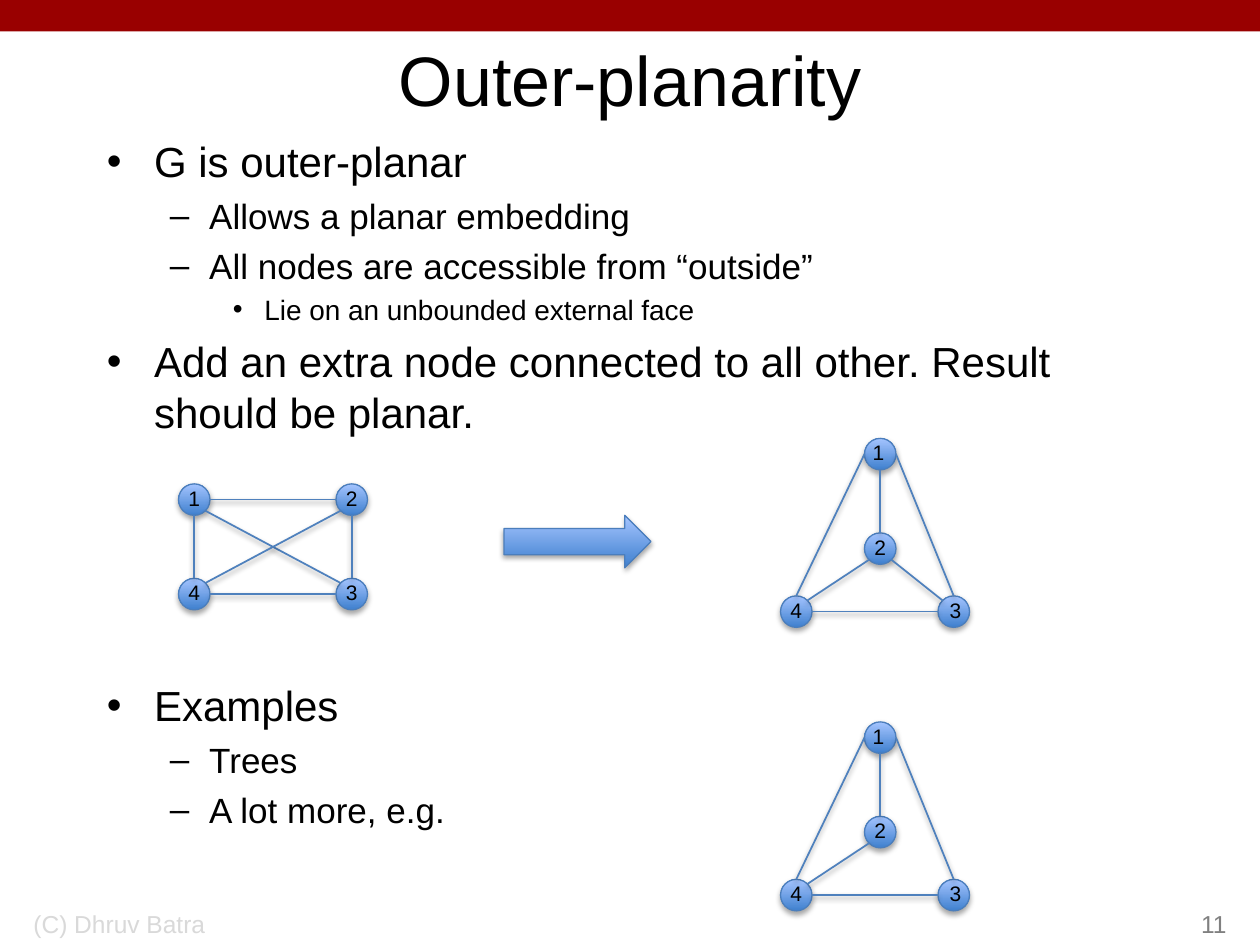
from lxml.etree import SubElement
from pptx import Presentation
from pptx.dml.color import RGBColor
from pptx.enum.shapes import MSO_CONNECTOR, MSO_SHAPE
from pptx.enum.text import MSO_ANCHOR, PP_ALIGN
from pptx.oxml.ns import qn
from pptx.util import Pt

rgb = RGBColor.from_string


def add_text(shapes, text, x, y, w, h, size, color="000000",
             align=PP_ALIGN.LEFT, anchor=MSO_ANCHOR.MIDDLE, wrap=True):
    tf = shapes.add_textbox(Pt(x), Pt(y), Pt(w), Pt(h)).text_frame
    tf.word_wrap = wrap
    tf.vertical_anchor = anchor
    p = tf.paragraphs[0]
    p.alignment = align
    r = p.add_run()
    r.text = text
    r.font.name, r.font.size = "Arial", Pt(size)
    r.font.color.rgb = rgb(color)


def style(sp, line, width, alpha, dist):
    """Line and soft shadow, plus the blue gradient on anything that fills."""
    if hasattr(sp, "fill"):
        sp.fill.gradient()
        sp.fill.gradient_angle = 90
        for stop, color in zip(sp.fill.gradient_stops, ("3F80CE", "A4C4FF")):
            stop.color.rgb = rgb(color)
    sp.line.color.rgb = rgb(line)
    sp.line.width = Pt(width)
    effects = SubElement(sp._element.spPr, qn("a:effectLst"))
    shadow = SubElement(effects, qn("a:outerShdw"), blurRad=str(Pt(3.1)),
                        dist=str(Pt(dist)), dir="5400000", rotWithShape="0")
    black = SubElement(shadow, qn("a:srgbClr"), val="000000")
    SubElement(black, qn("a:alpha"), val=str(alpha * 1000))


prs = Presentation()
prs.slide_width, prs.slide_height = Pt(720), Pt(540)
s = prs.slides.add_slide(prs.slide_layouts[6])

# Top band
band = s.shapes.add_shape(MSO_SHAPE.RECTANGLE, 0, 0, Pt(720), Pt(18))
band.shadow.inherit = False
band.fill.solid()
band.fill.fore_color.rgb = rgb("990000")
band.line.fill.background()

# Title
add_text(s.shapes, "Outer-planarity", 54, 18, 612, 54, 40, align=PP_ALIGN.CENTER)

# Bulleted body: level, text, space before
body = [
    (0, "G is outer-planar", 0),
    (1, "Allows a planar embedding", 4.6),
    (1, "All nodes are accessible from “outside”", 4.6),
    (2, "Lie on an unbounded external face", 3.7),
    (0, "Add an extra node connected to all other. Result should be planar.", 5.5),
    (0, "Examples", 139),  # leaves room for the graphs
    (1, "Trees", 4.6),
    (1, "A lot more, e.g.", 4.6),
]
levels = [(24, 27, 27, "•"), (20, 58.5, 22.5, "–"), (16, 90, 18, "•")]
tf = s.shapes.add_textbox(Pt(54), Pt(72), Pt(612), Pt(432)).text_frame
tf.word_wrap = True
tf.margin_top = Pt(5.5)
for i, (level, text, before) in enumerate(body):
    size, indent, hang, bullet = levels[level]
    p = tf.add_paragraph() if i else tf.paragraphs[0]
    p.level = level
    pPr = p._p.get_or_add_pPr()
    pPr.set("marL", str(Pt(indent)))
    pPr.set("indent", str(-Pt(hang)))
    SubElement(pPr, qn("a:buFont"), typeface="Arial")
    SubElement(pPr, qn("a:buChar"), char=bullet)
    if before:
        p.space_before = Pt(before)
    r = p.add_run()
    r.text = text
    r.font.name, r.font.size = "Arial", Pt(size)
    r.font.color.rgb = rgb("000000")

# Footer and slide number
add_text(s.shapes, "(C) Dhruv Batra", 12, 504, 228, 36, 14, "D9D9D9",
         anchor=MSO_ANCHOR.BOTTOM)
add_text(s.shapes, "11", 558, 504, 150, 36, 14, "808080",
         align=PP_ALIGN.RIGHT, anchor=MSO_ANCHOR.BOTTOM)

# Arrow between the two graphs
arrow = s.shapes.add_shape(MSO_SHAPE.RIGHT_ARROW, Pt(288), Pt(294.5), Pt(84), Pt(30))
style(arrow, "4B7EBC", 0.75, 35, 1.8)

# Graphs: node centres with label shift, and edges as (node, side, node, side)
R = 9
D = 6.36  # diagonal point on the circle
sides = {"n": (0, -R), "s": (0, R), "w": (-R, 0), "e": (R, 0),
         "nw": (-D, -D), "ne": (D, -D), "sw": (-D, D), "se": (D, D)}
square = {1: (111, 285.5, 0), 2: (201, 285.5, 0),
          3: (201, 339.5, 0), 4: (111, 339.5, 0)}
square_edges = [(1, "e", 2, "w"), (4, "e", 3, "w"), (1, "se", 3, "nw"),
                (1, "s", 4, "n"), (2, "s", 3, "n"), (2, "sw", 4, "ne")]
triangle = {1: (503, 259.5, -1), 2: (503, 313.5, 0),
            3: (545, 349.5, 1), 4: (455, 349.5, 0)}
tree_edges = [(1, "s", 2, "n"), (4, "e", 3, "w"), (1, "e", 3, "n"),
              (1, "w", 4, "n"), (2, "sw", 4, "ne")]
graphs = [
    (square, square_edges, 0),
    (triangle, tree_edges + [(2, "se", 3, "nw")], 0),
    (triangle, tree_edges, 162),
]
for nodes, edges, dy in graphs:
    shapes = s.shapes.add_group_shape().shapes
    for x, y, _ in nodes.values():
        node = shapes.add_shape(MSO_SHAPE.OVAL, Pt(x - R), Pt(y + dy - R),
                                Pt(2 * R), Pt(2 * R))
        style(node, "4B7EBC", 0.75, 35, 1.8)
    for a, side_a, b, side_b in edges:
        (xa, ya, _), (xb, yb, _) = nodes[a], nodes[b]
        (ax, ay), (bx, by) = sides[side_a], sides[side_b]
        edge = shapes.add_connector(MSO_CONNECTOR.STRAIGHT,
                                    Pt(xa + ax), Pt(ya + ay + dy),
                                    Pt(xb + bx), Pt(yb + by + dy))
        style(edge, "4F81BD", 1, 38, 1.6)
    for number, (x, y, shift) in nodes.items():
        add_text(shapes, str(number), x + shift - 10.8, y + dy - 11.8, 21.6, 21.6,
                 12, align=PP_ALIGN.CENTER, wrap=False)

prs.save("out.pptx")
